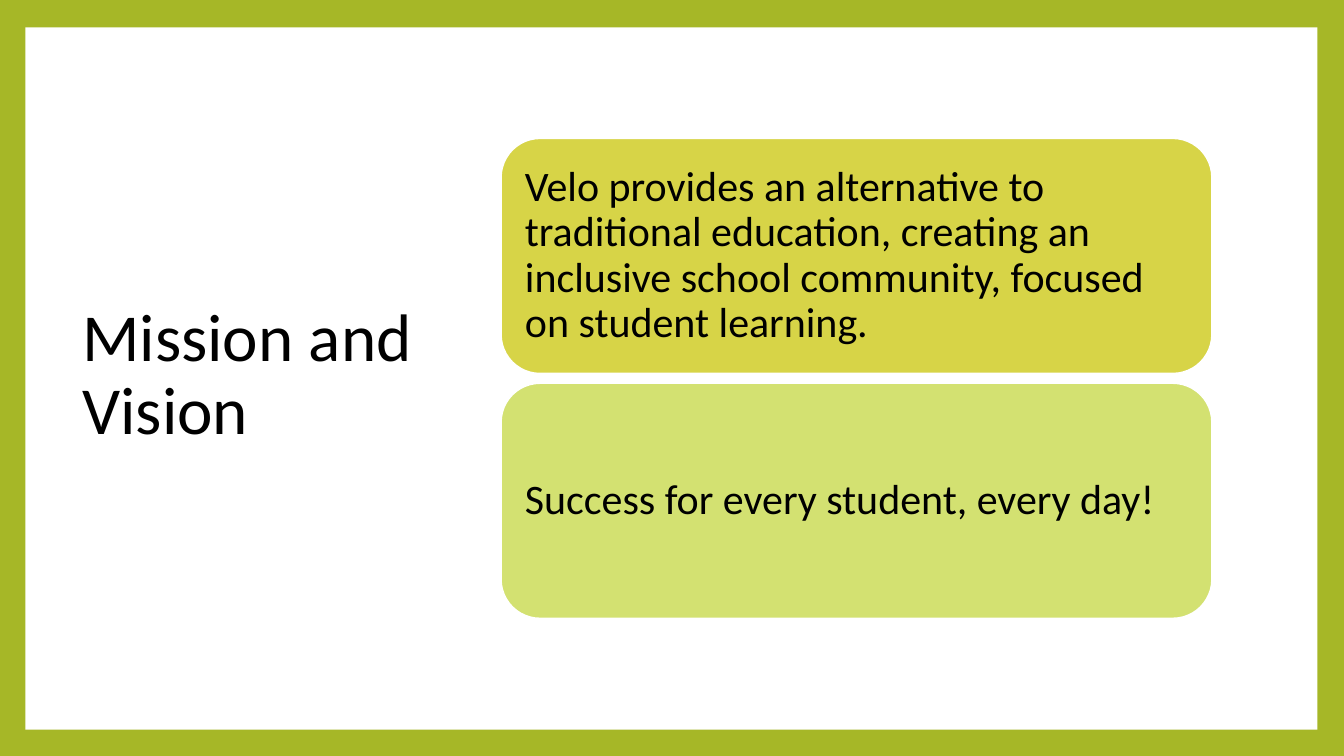
from dataclasses import dataclass

from pptx import Presentation
from pptx.dml.color import RGBColor
from pptx.enum.shapes import MSO_SHAPE
from pptx.enum.text import MSO_ANCHOR, PP_ALIGN
from pptx.shapes.autoshape import Shape
from pptx.slide import Slide
from pptx.text.text import TextFrame
from pptx.util import Cm, Pt

COLORS = {
    "frame": "A6B727",
    "white": "FFFFFF",
    "text": "000000",
    "mission": "D7D447",
    "vision": "D3E171",
}
FONT = "Calibri"
CARD_LEFT, CARD_TOP, CARD_WIDTH, CARD_HEIGHT = 12.62, 3.48, 17.93, 5.94
CARD_PITCH = 6.17


@dataclass
class Card:
    """One statement and the colour of its card."""

    text: str
    color: str


CARDS = [
    Card(
        "Velo provides an alternative to traditional education, creating an "
        "inclusive school community, focused on student learning.",
        "mission",
    ),
    Card("Success for every student, every day!", "vision"),
]


def rgb(name: str) -> RGBColor:
    """Look up a named colour."""
    return RGBColor.from_string(COLORS[name])


def write(tf: TextFrame, text: str, size: float) -> None:
    """Fill a frame with one left-aligned, vertically centred paragraph."""
    tf.text = text
    tf.word_wrap = True
    tf.vertical_anchor = MSO_ANCHOR.MIDDLE
    p = tf.paragraphs[0]
    p.alignment = PP_ALIGN.LEFT
    p.line_spacing = 0.9
    p.font.name = FONT
    p.font.size = Pt(size)
    p.font.color.rgb = rgb("text")


def add_block(s: Slide, kind: MSO_SHAPE, left: float, top: float,
              width: float, height: float, color: str) -> Shape:
    """Add a flat filled shape, measured in centimetres."""
    sp = s.shapes.add_shape(kind, Cm(left), Cm(top), Cm(width), Cm(height))
    sp.shadow.inherit = False
    sp.fill.solid()
    sp.fill.fore_color.rgb = rgb(color)
    sp.line.fill.background()
    return sp


def add_card(s: Slide, card: Card, index: int) -> None:
    """Add a statement card at its place in the stack."""
    sp = add_block(s, MSO_SHAPE.ROUNDED_RECTANGLE, CARD_LEFT,
                   CARD_TOP + index * CARD_PITCH, CARD_WIDTH, CARD_HEIGHT, card.color)
    sp.line.color.rgb = rgb("white")
    sp.line.width = Pt(1.5)
    tf = sp.text_frame
    tf.margin_left = tf.margin_right = tf.margin_top = tf.margin_bottom = Cm(0.32)
    write(tf, card.text, 30)


def main() -> None:
    """Build the mission and vision slide."""
    prs = Presentation()
    prs.slide_width, prs.slide_height = Cm(33.87), Cm(19.05)
    s = prs.slides.add_slide(prs.slide_layouts[5])
    s.background.fill.solid()
    s.background.fill.fore_color.rgb = rgb("frame")

    panel = add_block(s, MSO_SHAPE.RECTANGLE, 0.64, 0.69, 32.56, 17.7, "white")
    title = s.shapes.title
    title.element.addprevious(panel.element)
    title.left, title.top, title.width, title.height = Cm(1.82), Cm(1.7), Cm(9.35), Cm(15.57)
    write(title.text_frame, "Mission and Vision", 48)

    for index, card in enumerate(CARDS):
        add_card(s, card, index)
    prs.save("out.pptx")


if __name__ == "__main__":
    main()
